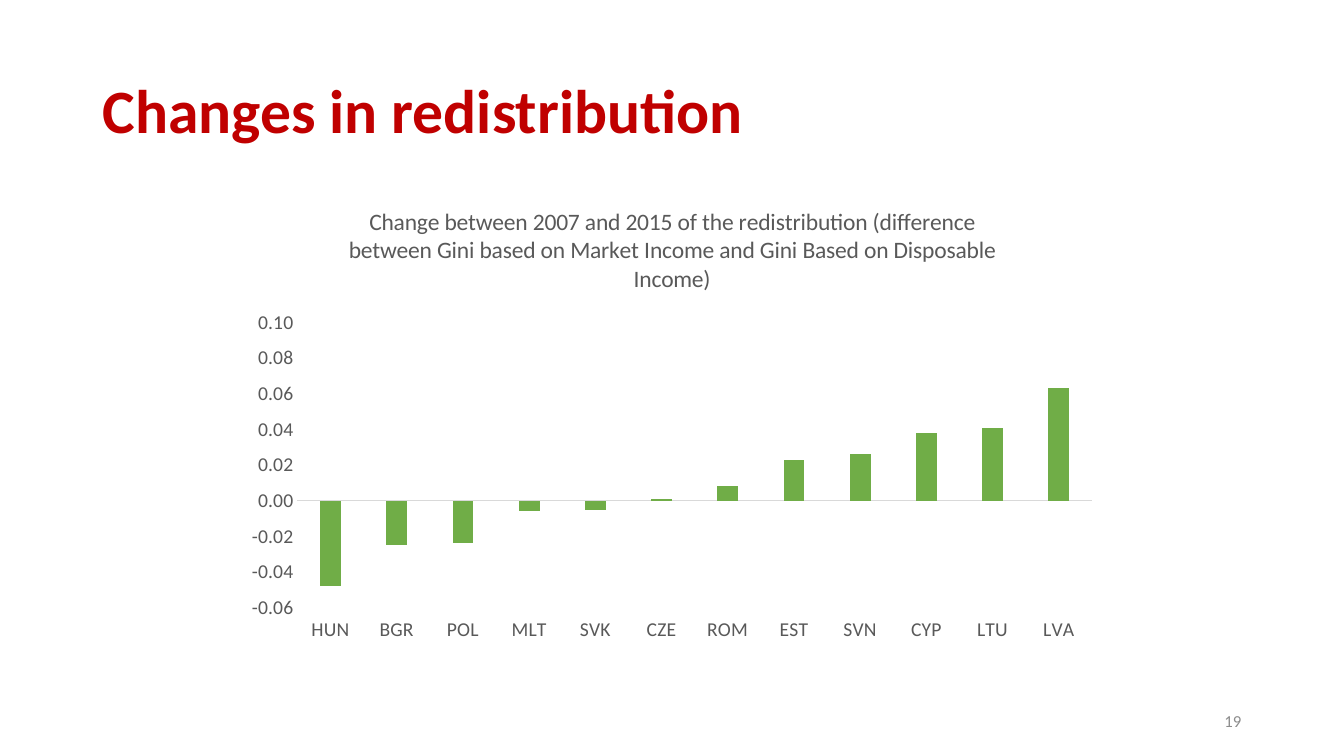
from pptx import Presentation
from pptx.chart.data import CategoryChartData
from pptx.dml.color import RGBColor
from pptx.enum.chart import XL_CHART_TYPE as ChartType, XL_TICK_LABEL_POSITION as LabelPosition, XL_TICK_MARK as TickMark
from pptx.enum.text import MSO_ANCHOR as Anchor, PP_ALIGN as Align
from pptx.oxml import parse_xml
from pptx.oxml.ns import nsdecls
from pptx.util import Inches, Pt

HEADING = "Changes in redistribution"
PAGE_NUMBER = "19"
CHART_TITLE = ("Change between 2007 and 2015 of the redistribution (difference between Gini "
               "based on Market Income and Gini Based on Disposable Income)")
CHANGES = {
    "HUN": -0.048, "BGR": -0.025, "POL": -0.024, "MLT": -0.006, "SVK": -0.005, "CZE": 0.001,
    "ROM": 0.008, "EST": 0.023, "SVN": 0.026, "CYP": 0.038, "LTU": 0.041, "LVA": 0.063,
}
FONT = "Calibri"
RED = RGBColor(0xC0, 0x00, 0x00)
GREEN = RGBColor(0x70, 0xAD, 0x47)
DARK_GRAY = RGBColor(0x59, 0x59, 0x59)
MID_GRAY = RGBColor(0x8C, 0x8C, 0x8C)
LIGHT_GRAY = RGBColor(0xD9, 0xD9, 0xD9)

HEADING_AREA = (0.92, 0.4, 11.5, 1.45)
NUMBER_AREA = (9.41, 6.95, 3, 0.4)
CHART_AREA = (2.32, 1.85, 8.69, 4.61)
PLOT_AREA = (2.95, 3.2, 7.88, 2.83)


def style_font(font, size, color, bold=False):
    font.name, font.size, font.bold = FONT, Pt(size), bold
    font.color.rgb = color


def add_text(page, area, text, size, color, bold=False, align=Align.LEFT):
    box = page.shapes.add_textbox(*map(Inches, area))
    frame = box.text_frame
    frame.word_wrap = True
    frame.vertical_anchor = Anchor.MIDDLE
    para = frame.paragraphs[0]
    para.alignment = align
    para.line_spacing = 0.9 if bold else 1.0
    span = para.add_run()
    span.text = text
    style_font(span.font, size, color, bold)


def style_axis(axis):
    axis.has_major_gridlines = False
    axis.major_tick_mark = axis.minor_tick_mark = TickMark.NONE
    style_font(axis.tick_labels.font, 14, DARK_GRAY)


def place_plot(chart):
    left, top, width, height = CHART_AREA
    plot_left, plot_top, plot_width, plot_height = PLOT_AREA
    shares = {"x": (plot_left - left) / width, "y": (plot_top - top) / height,
              "w": plot_width / width, "h": plot_height / height}
    edges = "".join(f'<c:{key} val="{share:.4f}"/>' for key, share in shares.items())
    layout = parse_xml(
        f'<c:layout {nsdecls("c")}><c:manualLayout><c:layoutTarget val="inner"/>'
        f'<c:xMode val="edge"/><c:yMode val="edge"/>{edges}</c:manualLayout></c:layout>')
    plot_area = chart.plots[0]._element.getparent()
    for old in plot_area.findall(layout.tag):
        plot_area.remove(old)
    plot_area.insert(0, layout)


def add_changes_chart(page):
    data = CategoryChartData(number_format="#,##0.00")
    data.categories = list(CHANGES)
    data.add_series("Series 1", list(CHANGES.values()))
    chart = page.shapes.add_chart(
        ChartType.COLUMN_CLUSTERED, *map(Inches, CHART_AREA), data).chart
    chart.has_legend = False
    chart.font.name, chart.font.size = FONT, Pt(14)

    chart.has_title = True
    chart.chart_title.include_in_layout = False
    span = chart.chart_title.text_frame.paragraphs[0].add_run()
    span.text = CHART_TITLE
    style_font(span.font, 16.8, DARK_GRAY)

    plot = chart.plots[0]
    plot.gap_width, plot.overlap, plot.vary_by_categories = 219, -27, False
    series = plot.series[0]
    series.invert_if_negative = False
    series.format.fill.solid()
    series.format.fill.fore_color.rgb = GREEN

    countries, values = chart.category_axis, chart.value_axis
    for axis in (countries, values):
        style_axis(axis)
    countries.tick_label_position = LabelPosition.LOW
    countries.format.line.color.rgb = LIGHT_GRAY
    countries.format.line.width = Pt(0.75)
    values.format.line.fill.background()
    values.minimum_scale, values.maximum_scale, values.major_unit = -0.06, 0.1, 0.02
    values.tick_labels.number_format = "#,##0.00"
    values.tick_labels.number_format_is_linked = False
    place_plot(chart)


def main():
    """Build the redistribution slide."""
    deck = Presentation()
    deck.slide_width, deck.slide_height = Inches(13.33), Inches(7.5)
    page = deck.slides.add_slide(deck.slide_layouts[6])
    add_text(page, HEADING_AREA, HEADING, 44, RED, bold=True)
    add_text(page, NUMBER_AREA, PAGE_NUMBER, 12, MID_GRAY, align=Align.RIGHT)
    add_changes_chart(page)
    deck.save("out.pptx")


if __name__ == "__main__":
    main()
